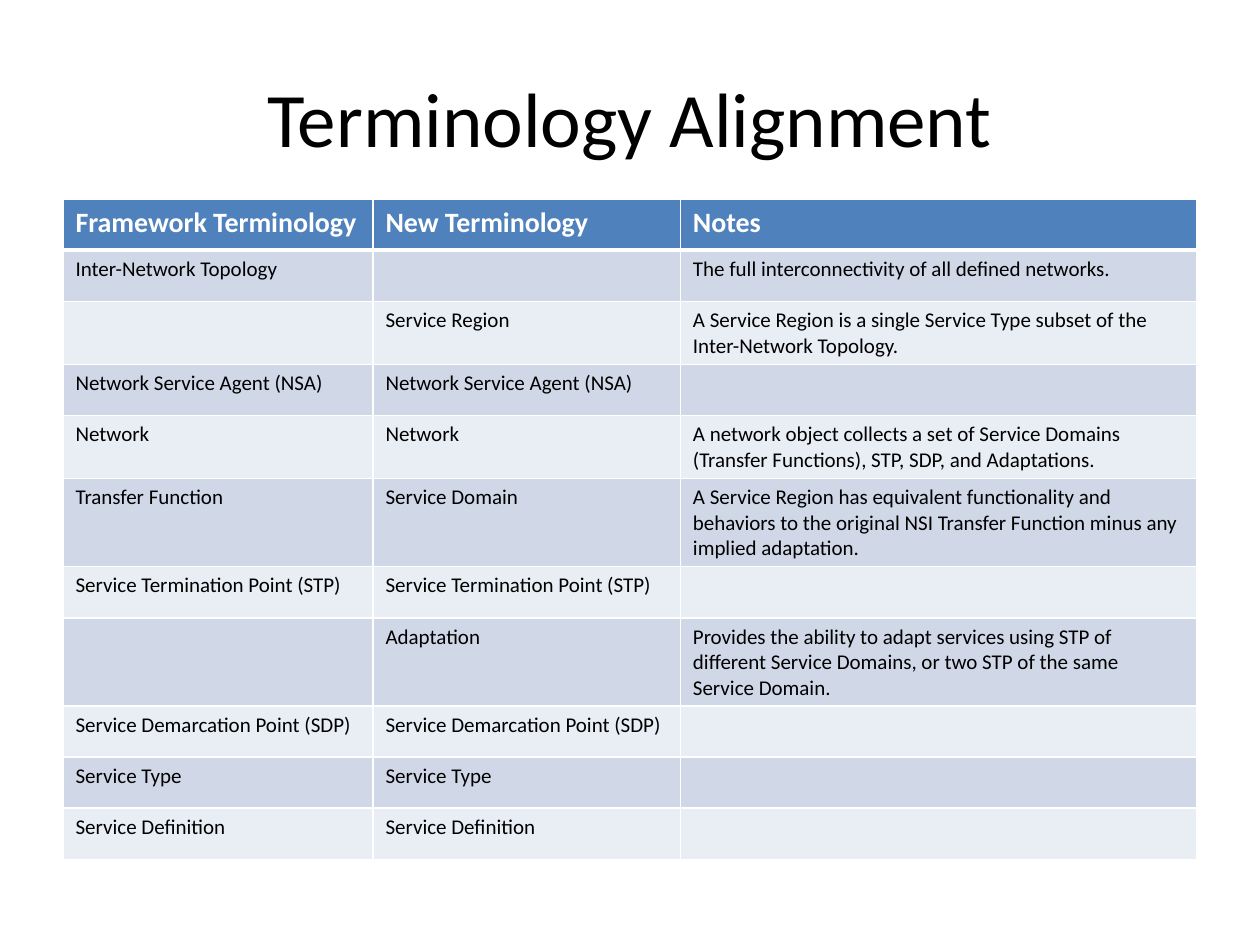
from dataclasses import dataclass

from lxml.etree import SubElement
from pptx import Presentation
from pptx.dml.color import RGBColor
from pptx.enum.text import MSO_ANCHOR as Anchor, PP_ALIGN as Align
from pptx.oxml.ns import qn
from pptx.util import Pt

FONT = "Calibri"
COLORS = {
    "text": "000000",
    "white": "FFFFFF",
    "header": "4F81BD",
    "odd_row": "D0D8E8",
    "even_row": "E9EDF4",
}
COLUMN_WIDTHS = (177.12, 175.68, 295.2)
ROW_HEIGHT = 29.2
TABLE_HEIGHT = 377.28
THIN, THICK = 1, 3


@dataclass(frozen=True)
class Term:
    framework: str = ""
    new: str = ""
    notes: str = ""

    def texts(self) -> tuple[str, str, str]:
        return self.framework, self.new, self.notes


HEADER = Term("Framework Terminology", "New Terminology", "Notes")
TERMS = (
    Term("Inter-Network Topology", notes="The full interconnectivity of all defined networks."),
    Term(
        new="Service Region",
        notes="A Service Region is a single Service Type subset of the Inter-Network Topology.",
    ),
    Term("Network Service Agent (NSA)", "Network Service Agent (NSA)"),
    Term(
        "Network",
        "Network",
        "A network object collects a set of Service Domains (Transfer Functions), "
        "STP, SDP, and Adaptations.",
    ),
    Term(
        "Transfer Function",
        "Service Domain",
        "A Service Region has equivalent functionality and behaviors to the original "
        "NSI Transfer Function minus any implied adaptation.",
    ),
    Term("Service Termination Point (STP)", "Service Termination Point (STP)"),
    Term(
        new="Adaptation",
        notes="Provides the ability to adapt services using STP of different Service Domains, "
        "or two STP of the same Service Domain.",
    ),
    Term("Service Demarcation Point (SDP)", "Service Demarcation Point (SDP)"),
    Term("Service Type", "Service Type"),
    Term("Service Definition", "Service Definition"),
)


def write_text(text_frame, text: str, *, size: float, color: str = "text",
               bold: bool = False, align: Align = Align.LEFT) -> None:
    paragraph = text_frame.paragraphs[0]
    paragraph.alignment = align
    run = paragraph.add_run()
    run.text = text
    run.font.name = FONT
    run.font.size = Pt(size)
    run.font.bold = bold
    run.font.color.rgb = RGBColor.from_string(COLORS[color])


def set_borders(cell, *, top: float = THIN, bottom: float = THIN) -> None:
    properties = cell._tc.get_or_add_tcPr()
    widths = {"a:lnL": THIN, "a:lnR": THIN, "a:lnT": top, "a:lnB": bottom}
    for tag, width in widths.items():
        line = SubElement(properties, qn(tag), w=str(Pt(width)))
        fill = SubElement(line, qn("a:solidFill"))
        SubElement(fill, qn("a:srgbClr"), val=COLORS["white"])


def draw_row(table, index: int, term: Term) -> None:
    is_header = index == 0
    fill = "header" if is_header else "odd_row" if index % 2 else "even_row"
    table.rows[index].height = Pt(ROW_HEIGHT)
    for column, text in enumerate(term.texts()):
        cell = table.cell(index, column)
        set_borders(
            cell,
            top=THICK if index == 1 else THIN,
            bottom=THICK if is_header else THIN,
        )
        cell.fill.solid()
        cell.fill.fore_color.rgb = RGBColor.from_string(COLORS[fill])
        if text:
            write_text(
                cell.text_frame,
                text,
                size=16 if is_header else 12,
                color="white" if is_header else "text",
                bold=is_header,
            )


def draw_title(slide, text: str) -> None:
    shape = slide.shapes.add_textbox(Pt(36), Pt(21.6), Pt(648), Pt(90))
    shape.text_frame.word_wrap = True
    shape.text_frame.vertical_anchor = Anchor.MIDDLE
    write_text(shape.text_frame, text, size=44, align=Align.CENTER)


def draw_table(slide) -> None:
    rows = (HEADER, *TERMS)
    shape = slide.shapes.add_table(
        len(rows), len(COLUMN_WIDTHS), Pt(36), Pt(113.76),
        Pt(sum(COLUMN_WIDTHS)), Pt(TABLE_HEIGHT),
    )
    table = shape.table
    for column, width in zip(table.columns, COLUMN_WIDTHS):
        column.width = Pt(width)
    for index, term in enumerate(rows):
        draw_row(table, index, term)
    shape.height = Pt(TABLE_HEIGHT)


def main() -> None:
    presentation = Presentation()
    presentation.slide_width = Pt(720)
    presentation.slide_height = Pt(540)
    slide = presentation.slides.add_slide(presentation.slide_layouts[6])
    draw_title(slide, "Terminology Alignment")
    draw_table(slide)
    presentation.save("out.pptx")


if __name__ == "__main__":
    main()
